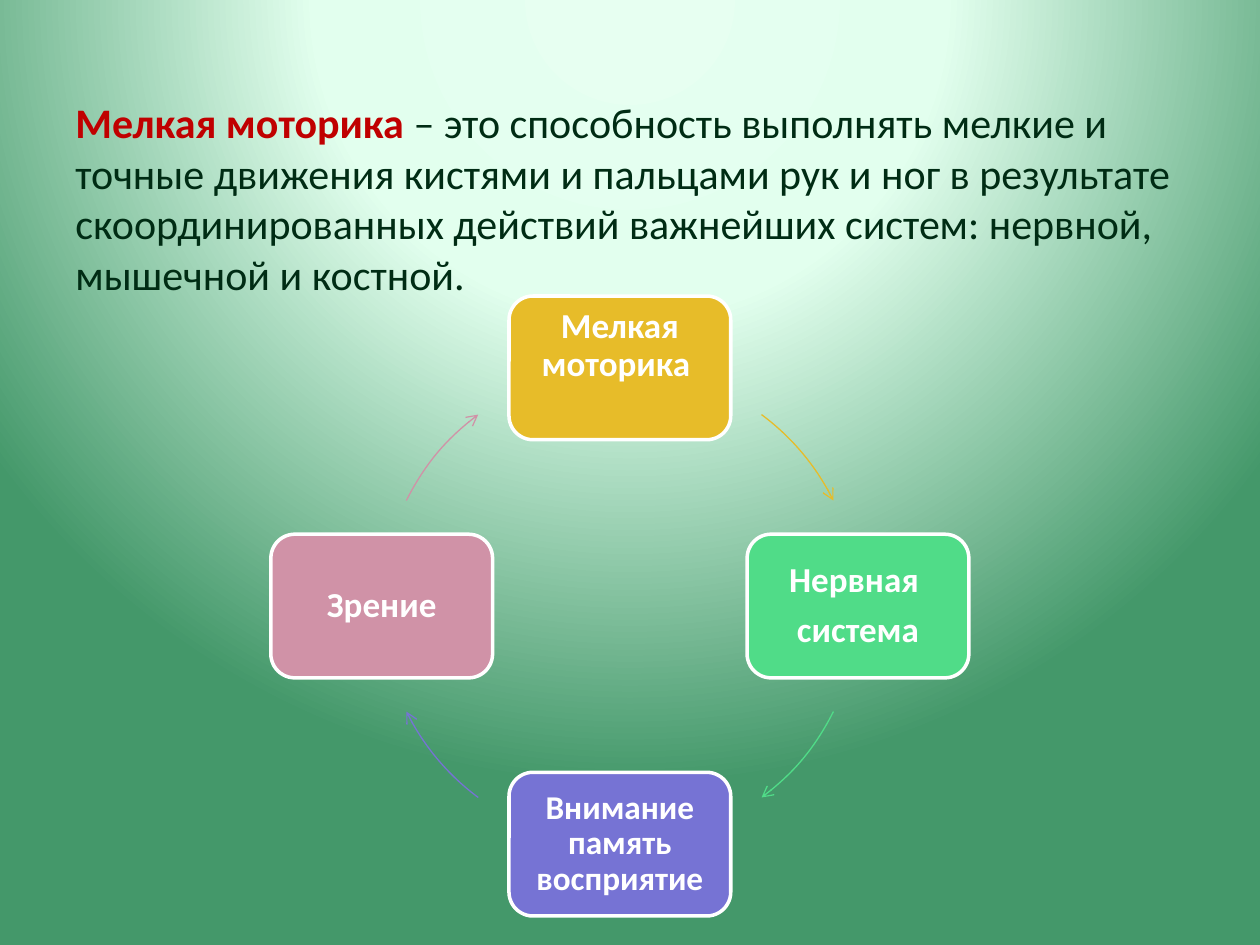
from math import cos, radians, sin

from pptx import Presentation
from pptx.dml.color import RGBColor
from pptx.enum.shapes import MSO_SHAPE
from pptx.enum.text import MSO_ANCHOR, PP_ALIGN
from pptx.oxml import parse_xml
from pptx.oxml.ns import nsdecls, qn
from pptx.util import Inches, Pt

WHITE = "FFFFFF"
STEPS = [
    ("E7BC29", 20, ["Мелкая моторика "]),
    ("50DC88", 20, ["Нервная ", "система"]),
    ("7673D4", 19, ["Внимание память восприятие"]),
    ("D092A7", 20, ["Зрение"]),
]


def color(value):
    return RGBColor.from_string(value)


def add_run(paragraph, text, size, fill, bold=False):
    run = paragraph.add_run()
    run.text = text
    run.font.name = "Calibri"
    run.font.size = Pt(size)
    run.font.bold = bold
    run.font.color.rgb = color(fill)


def paint_background(slide):
    slide.background.fill.gradient()
    gradient = slide.element.find(".//" + qn("a:gradFill"))
    stops = "".join(
        f'<a:gs pos="{position * 1000}"><a:srgbClr val="{value}"/></a:gs>'
        for position, value in [(0, "E7FFF1"), (40, "E2FFEE"), (100, "44986A")]
    )
    gradient.getparent().replace(gradient, parse_xml(
        f'<a:gradFill {nsdecls("a")} rotWithShape="1"><a:gsLst>{stops}</a:gsLst>'
        '<a:path path="circle">'
        '<a:fillToRect l="50000" t="-80000" r="50000" b="180000"/>'
        '</a:path></a:gradFill>'
    ))


def add_definition(slide, left, top, width, height):
    shape = slide.shapes.add_textbox(
        Inches(left), Inches(top), Inches(width), Inches(height))
    frame = shape.text_frame
    frame.word_wrap = True
    frame.vertical_anchor = MSO_ANCHOR.TOP
    frame.margin_top = Inches(0.15)
    paragraph = frame.paragraphs[0]
    add_run(paragraph, "Мелкая моторика ", 24, "C00000", True)
    add_run(paragraph, "– это способность выполнять мелкие и точные движения "
            "кистями и пальцами рук и ног в результате скоординированных "
            "действий важнейших систем: нервной, мышечной и костной.",
            24, "002C14")


def add_step(slide, left, top, width, height, fill, size, lines):
    shape = slide.shapes.add_shape(
        MSO_SHAPE.ROUNDED_RECTANGLE,
        Inches(left), Inches(top), Inches(width), Inches(height))
    shape.shadow.inherit = False
    shape.fill.solid()
    shape.fill.fore_color.rgb = color(fill)
    shape.line.color.rgb = color(WHITE)
    shape.line.width = Pt(2)
    frame = shape.text_frame
    frame.word_wrap = True
    frame.vertical_anchor = MSO_ANCHOR.MIDDLE
    frame.margin_left = frame.margin_right = Inches(0.08)
    frame.margin_top = frame.margin_bottom = Inches(0.08)
    for index, text in enumerate(lines):
        paragraph = frame.add_paragraph() if index else frame.paragraphs[0]
        paragraph.alignment = PP_ALIGN.CENTER
        paragraph.line_spacing = 0.9
        paragraph.space_after = Pt(7)
        add_run(paragraph, text, size, WHITE, True)
    return shape


def add_arc(slide, left, top, diameter, start, end, stroke):
    shape = slide.shapes.add_shape(
        MSO_SHAPE.ARC,
        Inches(left), Inches(top), Inches(diameter), Inches(diameter))
    shape.shadow.inherit = False
    shape.fill.background()
    shape.adjustments[0] = start * 0.6
    shape.adjustments[1] = end * 0.6
    shape.line.color.rgb = color(stroke)
    shape.line.width = Pt(0.75)
    outline = shape.element.spPr.find(qn("a:ln"))
    outline.append(parse_xml(f'<a:tailEnd {nsdecls("a")} type="arrow"/>'))


def add_cycle(slide, left, top, diameter):
    width, height = 1.76, 1.14
    radius = diameter / 2
    boxes = []
    for index, (fill, size, lines) in enumerate(STEPS):
        angle = (270 + 90 * index) % 360
        center_x = left + radius * (1 + cos(radians(angle)))
        center_y = top + radius * (1 + sin(radians(angle)))
        boxes.append(add_step(slide, center_x - width / 2, center_y - height / 2,
                              width, height, fill, size, lines))
        start = angle + (26.3 if index % 2 else 36.5)
        add_arc(slide, left, top, diameter, start, start + 27.2, fill)
    first_frame = boxes[0].text_frame
    first_frame.vertical_anchor = MSO_ANCHOR.TOP
    first_frame.margin_top = Inches(0.04)


def main():
    presentation = Presentation()
    presentation.slide_width = Inches(10)
    presentation.slide_height = Inches(7.5)
    slide = presentation.slides.add_slide(presentation.slide_layouts[6])
    paint_background(slide)
    add_definition(slide, 0.5, 0.62, 9, 2.66)
    add_cycle(slide, 3.03, 2.92, 3.78)
    presentation.save("out.pptx")


if __name__ == "__main__":
    main()
